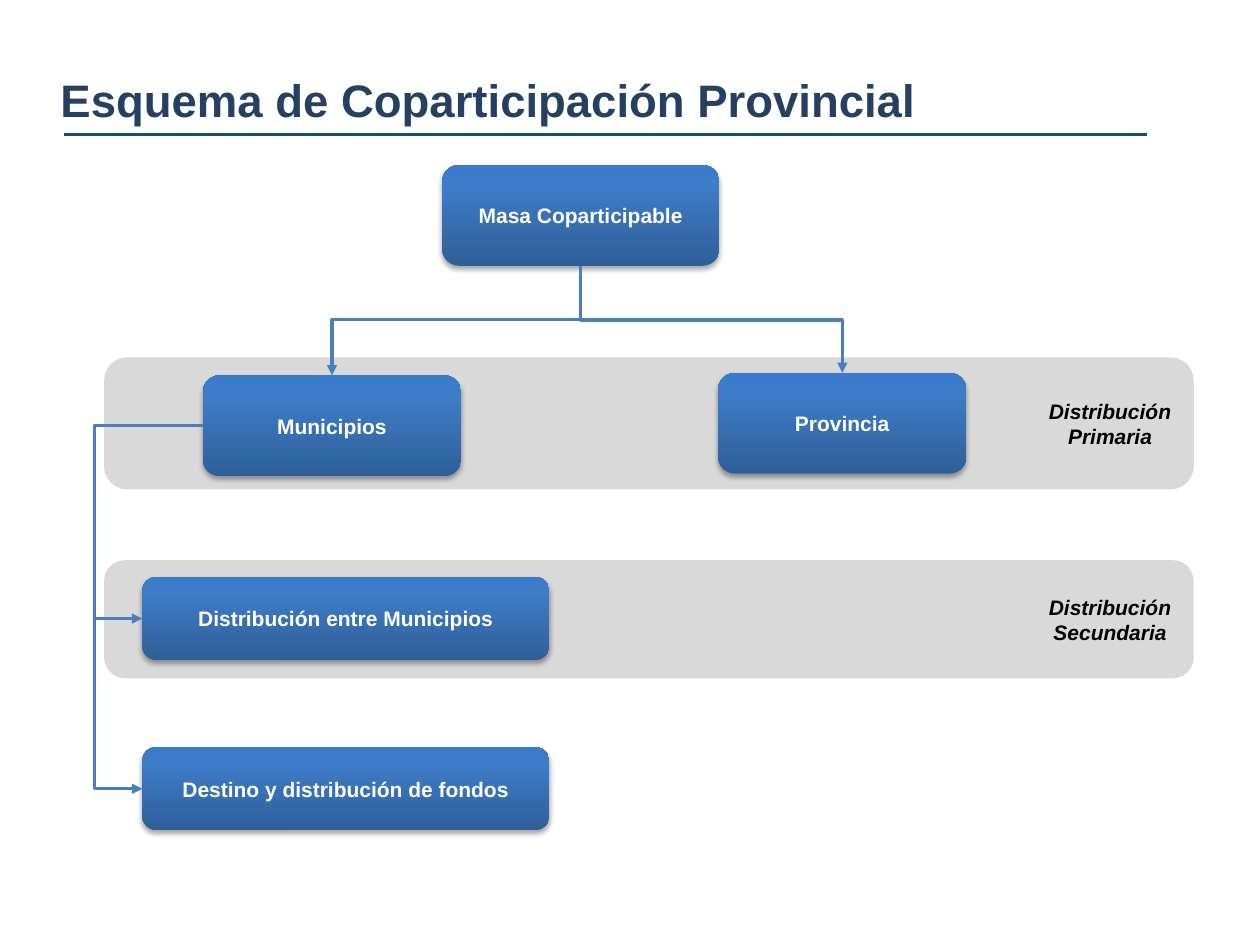
import copy

import lxml.etree
import pptx
import pptx.dml.color
import pptx.enum.shapes
import pptx.enum.text
import pptx.oxml
import pptx.oxml.ns
import pptx.util

COLORS = {
    "title": "254061", "rule": "1F497D", "band": "D9D9D9", "arrow": "4B7EBC",
    "box_bottom": "2F5F99", "box_middle": "3D7CC7", "box_top": "3A7CCB",
    "box_text": "FFFFFF", "stage": "000000", "shadow": "000000",
}
RGB = {part: pptx.dml.color.RGBColor.from_string(code) for part, code in COLORS.items()}
GRADIENT = [(0, "box_bottom"), (0.8, "box_middle"), (1, "box_top")]
SHADOW = (
    f'<a:outerShdw {pptx.oxml.ns.nsdecls("a")} blurRad="39370" dist="22860" dir="5400000"'
    f' rotWithShape="0"><a:srgbClr val="{COLORS["shadow"]}"><a:alpha val="35000"/>'
    '</a:srgbClr></a:outerShdw>'
)
ROUNDED = pptx.enum.shapes.MSO_SHAPE.ROUNDED_RECTANGLE
CONNECTOR = pptx.enum.shapes.MSO_CONNECTOR
CENTER = pptx.enum.text.PP_ALIGN.CENTER
MIDDLE = pptx.enum.text.MSO_ANCHOR.MIDDLE
FIT = pptx.enum.text.MSO_AUTO_SIZE.SHAPE_TO_FIT_TEXT
qn = pptx.oxml.ns.qn

deck = pptx.Presentation()
deck.slide_width = pptx.util.Inches(10)
deck.slide_height = pptx.util.Inches(7.5)
slide = deck.slides.add_slide(deck.slide_layouts[5])
UNIT = deck.slide_width / 100  # square grid: 100 columns by 75 rows


def grid(*counts):
    return [round(count * UNIT) for count in counts]


def write(shape, words, size, color, align, italic=False):
    frame = shape.text_frame
    frame.word_wrap = True
    paragraph = frame.paragraphs[0]
    paragraph.alignment = align
    run = paragraph.add_run()
    run.text = words
    run.font.name = "Arial"
    run.font.size = pptx.util.Pt(size)
    run.font.bold = True
    run.font.italic = italic
    run.font.color.rgb = RGB[color]


# Title and the rule below it
title = slide.shapes.title
title.left, title.top, title.width, title.height = grid(3.8, 5.2, 88.2, 5.4)
write(title, "Esquema de Coparticipación Provincial", 26, "title", pptx.enum.text.PP_ALIGN.LEFT)
title.text_frame.vertical_anchor = pptx.enum.text.MSO_ANCHOR.TOP
title.text_frame.auto_size = FIT

rule = slide.shapes.add_connector(CONNECTOR.STRAIGHT, *grid(5.1, 10.7, 91, 10.7))
rule.line.color.rgb = RGB["rule"]
rule.line.width = pptx.util.Pt(1.5)

# Grey bands, one per distribution stage
for top, height, stage in [
    (28.5, 10.2, "Distribución Primaria"),
    (44.6, 9.1, "Distribución Secundaria"),
]:
    band = slide.shapes.add_shape(ROUNDED, *grid(8.4, top, 86.2, height))
    band.shadow.inherit = False
    band.fill.solid()
    band.fill.fore_color.rgb = RGB["band"]
    band.line.color.rgb = RGB["band"]
    band.line.width = pptx.util.Pt(2)
    label_top = top + height / 2 - 2.5
    label = slide.shapes.add_textbox(*grid(81.2, label_top, 13.8, 5))
    write(label, stage, 12, "stage", CENTER, italic=True)
    label.text_frame.vertical_anchor = MIDDLE
    label.text_frame.auto_size = FIT

# Boxes: left, top, width, height in grid units
BOXES = {
    "Masa Coparticipable": (35.1, 13.1, 22, 8),
    "Provincia": (57, 29.6, 19.7, 8),
    "Municipios": (16.1, 29.8, 20.5, 8),
    "Distribución entre Municipios": (11.3, 45.8, 32.3, 6.6),
    "Destino y distribución de fondos": (11.3, 59.3, 32.3, 6.6),
}
for words, place in BOXES.items():
    box = slide.shapes.add_shape(ROUNDED, *grid(*place))
    box.fill.gradient()
    box.fill.gradient_angle = 90
    first_stop = box.element.spPr.find(".//" + qn("a:gs"))
    first_stop.addnext(copy.deepcopy(first_stop))
    for stop, (position, color) in zip(box.fill.gradient_stops, GRADIENT):
        stop.position = position
        stop.color.rgb = RGB[color]
    box.line.fill.background()
    box.shadow.inherit = False
    effects = box.element.spPr.find(qn("a:effectLst"))
    effects.append(pptx.oxml.parse_xml(SHADOW))
    write(box, words, 12, "box_text", CENTER)
    box.text_frame.vertical_anchor = MIDDLE
    box.text_frame.margin_left = box.text_frame.margin_right = pptx.util.Inches(0.04)

# Elbow arrows: the total splits downwards, the municipal share runs down the left
elbows = []
left, top, width, height = BOXES["Masa Coparticipable"]
split_x, split_y, split_turn = left + width / 2, top + height, 25.4
for target in ("Municipios", "Provincia"):
    left, top, width, height = BOXES[target]
    target_x = left + width / 2
    drop, span = top - split_y, abs(target_x - split_x)
    mid_x, mid_y = (split_x + target_x) / 2, (split_y + top) / 2
    # The elbow is laid out sideways about its centre, then turned to point down
    elbow = slide.shapes.add_connector(CONNECTOR.ELBOW, *grid(
        mid_x - drop / 2, mid_y - span / 2, mid_x + drop / 2, mid_y + span / 2))
    frame = elbow.element.spPr.find(qn("a:xfrm"))
    if target_x < split_x:
        frame.set("rot", "5400000")
    else:
        frame.set("rot", "16200000")
        frame.set("flipH", "1")
    elbows.append((elbow, (split_turn - split_y) / drop))

left, top, width, height = BOXES["Municipios"]
share_x, share_y, share_turn = left, top + height / 2, 7.5
for target in ("Distribución entre Municipios", "Destino y distribución de fondos"):
    left, top, width, height = BOXES[target]
    elbow = slide.shapes.add_connector(
        CONNECTOR.ELBOW, *grid(share_x, share_y, left, top + height / 2))
    elbows.append((elbow, (share_x - share_turn) / (share_x - left)))

for elbow, turn in elbows:
    elbow.line.color.rgb = RGB["arrow"]
    elbow.line.width = pptx.util.Pt(1.75)
    properties = elbow.element.spPr
    lxml.etree.SubElement(properties.find(".//" + qn("a:avLst")), qn("a:gd"),
                          name="adj1", fmla=f"val {round(turn * 100000)}")
    lxml.etree.SubElement(properties.find(qn("a:ln")), qn("a:tailEnd"), type="triangle")

for connector in [rule] + [elbow for elbow, turn in elbows]:
    lxml.etree.SubElement(connector.element.spPr, qn("a:effectLst"))

deck.save("out.pptx")
